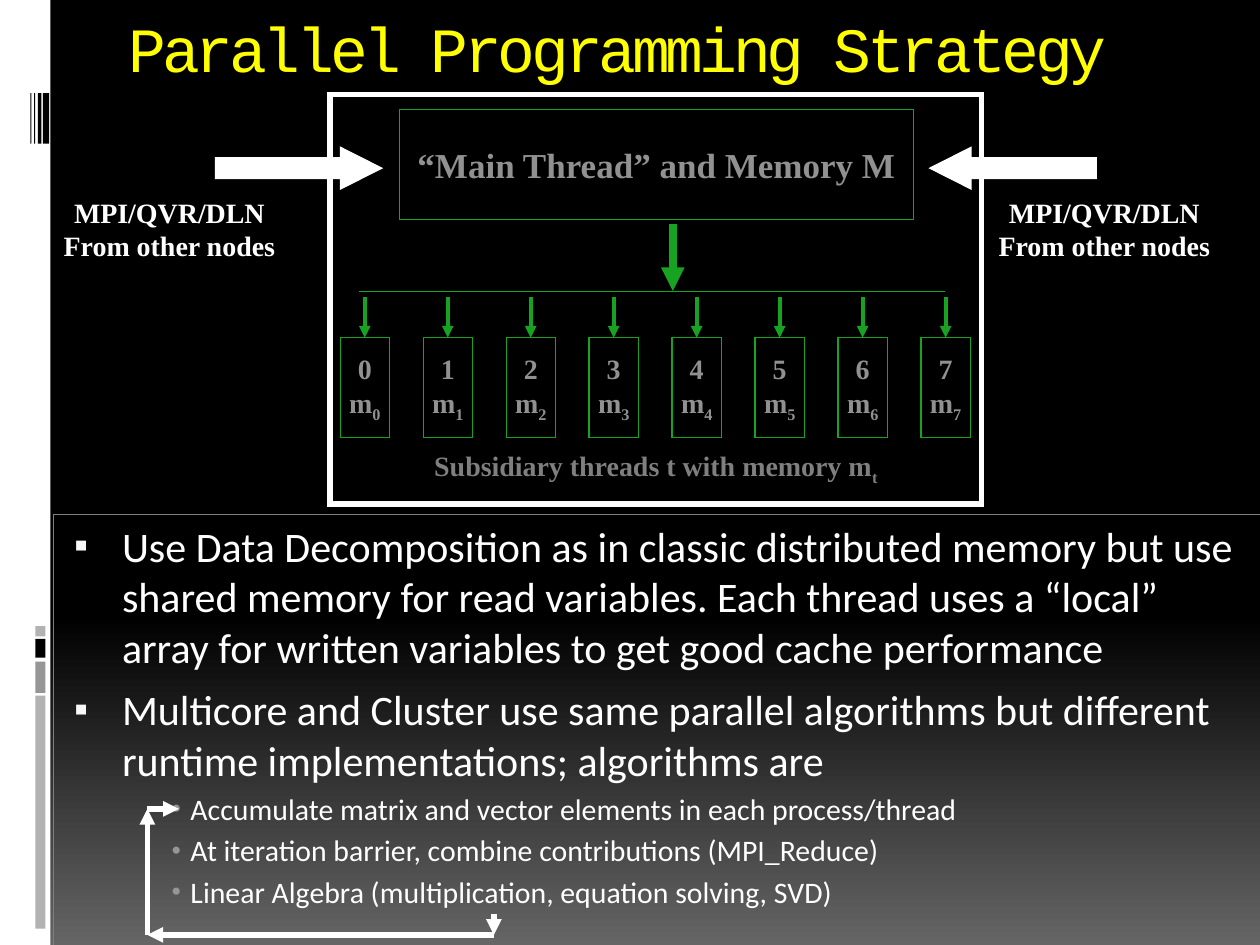
from lxml.etree import SubElement as Sub
from pptx import Presentation
from pptx.dml.color import RGBColor
from pptx.enum.shapes import MSO_CONNECTOR as Link, MSO_SHAPE as Form
from pptx.enum.text import MSO_ANCHOR as Anchor, PP_ALIGN as Align
from pptx.oxml.ns import qn
from pptx.util import Inches, Pt

BLACK = RGBColor(0x00, 0x00, 0x00)
WHITE = RGBColor(0xFF, 0xFF, 0xFF)
PALE = RGBColor(0xF8, 0xF8, 0xF8)
SILVER = RGBColor(0xB2, 0xB2, 0xB2)
GRAY = RGBColor(0x96, 0x96, 0x96)
INK = RGBColor(0x91, 0x91, 0x91)
DIM = RGBColor(0x7F, 0x7F, 0x7F)
SMOKE = RGBColor(0x65, 0x65, 0x65)
GREEN = RGBColor(0x18, 0xA2, 0x21)
YELLOW = RGBColor(0xFF, 0xFF, 0x00)
SERIF, SANS, MONO = "Times New Roman", "Calibri", "Courier New"

POINTS = [
    "Use Data Decomposition as in classic distributed memory but use shared memory for read variables. "
    "Each thread uses a “local” array for written variables to get good cache performance",
    "Multicore and Cluster use same parallel algorithms but different runtime implementations; algorithms are",
]
STEPS = [
    " Accumulate matrix and vector elements in each process/thread",
    " At iteration barrier, combine contributions (MPI_Reduce)",
    " Linear Algebra (multiplication, equation solving, SVD)",
]


class Deck:
    """Holds the style and the current slide, and draws each kind of element."""

    def __init__(self):
        self.show = Presentation()
        self.show.slide_width, self.show.slide_height = Inches(10), Inches(7.5)
        self.slide = self.show.slides.add_slide(self.show.slide_layouts[5])
        self.shapes = self.slide.shapes

    def back(self):
        fill = self.slide.background.fill
        fill.gradient()
        fill.gradient_angle = 270
        for stop, place, color in zip(fill.gradient_stops, (0.65, 1), (BLACK, SMOKE)):
            stop.position, stop.color.rgb = place, color

    def font(self, run, size, color, name, bold=False):
        run.font.size, run.font.name, run.font.bold = Pt(size), name, bold
        run.font.color.rgb = color

    def pad(self, frame, side, top):
        frame.margin_left = frame.margin_right = Inches(side)
        frame.margin_top = frame.margin_bottom = Inches(top)

    def title(self, text, *at):
        head = self.shapes.title
        head.left, head.top, head.width, head.height = map(Inches, at)
        frame = head.text_frame
        frame.text = text
        frame.vertical_anchor = Anchor.MIDDLE
        para = frame.paragraphs[0]
        para.alignment = Align.LEFT
        self.font(para.runs[0], 36, YELLOW, MONO)
        para.runs[0].font._element.set("spc", "-240")

    def shape(self, *at, form=Form.RECTANGLE, fill=None, line=None, width=0.75):
        shape = self.shapes.add_shape(form, *map(Inches, at))
        shape.shadow.inherit = False
        if fill is None:
            shape.fill.background()
        else:
            shape.fill.solid()
            shape.fill.fore_color.rgb = fill
        if line is None:
            shape.line.fill.background()
        else:
            shape.line.color.rgb, shape.line.width = line, Pt(width)
            Sub(shape.line._get_or_add_ln(), qn("a:miter"), lim="800000")
        return shape

    def label(self, frame, lines, size, color, sub=None):
        frame.text = "\n".join(lines)
        self.pad(frame, 0.04, 0.02)
        for para in frame.paragraphs:
            para.alignment = Align.CENTER
        if sub:
            run = para.add_run()
            run.text = sub
            run.font._element.set("baseline", "-25000")
        for para in frame.paragraphs:
            for run in para.runs:
                self.font(run, size, color, SERIF, True)

    def box(self, lines, *at, size=16, width=0.75, sub=None):
        box = self.shape(*at, line=GREEN, width=width)
        self.label(box.text_frame, lines, size, INK, sub)
        box.text_frame.word_wrap = False
        box.text_frame.vertical_anchor = Anchor.MIDDLE
        return box

    def text(self, lines, *at, color=WHITE, sub=None):
        frame = self.shapes.add_textbox(*map(Inches, at)).text_frame
        frame.word_wrap = True
        self.label(frame, lines, 16, color, sub)
        return frame

    def line(self, start, end, color, width, tip=True, goal=None):
        line = self.shapes.add_connector(Link.STRAIGHT, *map(Inches, start + end))
        line.line.color.rgb, line.line.width = color, Pt(width)
        if tip:
            Sub(line.line._get_or_add_ln(), qn("a:tailEnd"), type="triangle")
        if goal is not None:
            line.end_connect(goal, 0)
        Sub(line._element.spPr, qn("a:effectLst"))

    def bullet(self, para, sign, color, size):
        prop = para._p.get_or_add_pPr()
        tint = Sub(prop, qn("a:buClr"))
        Sub(tint, qn("a:srgbClr"), val=str(color))
        Sub(prop, qn("a:buSzPct"), val=str(size * 1000))
        Sub(prop, qn("a:buFont"), typeface=SERIF)
        Sub(prop, qn("a:buChar"), char=sign)

    def body(self, points, steps, *at):
        frame = self.shape(*at, line=DIM, width=0.25).text_frame
        frame.text = "\n".join(points + steps)
        frame.word_wrap = True
        frame.vertical_anchor = Anchor.TOP
        self.pad(frame, 0.1, 0.05)
        for i, para in enumerate(frame.paragraphs):
            main = i < len(points)
            left, hang, gap, size = (0.45, 0.38, 7, 24) if main else (0.94, 0.1, 3.4, 17)
            para.alignment = Align.LEFT
            para.space_before = Pt(gap)
            para.level = 0 if main else 4
            prop = para._p.get_or_add_pPr()
            prop.set("marL", str(Inches(left)))
            prop.set("indent", str(-Inches(hang)))
            self.bullet(para, *(("▪", PALE, 95) if main else ("•", GRAY, 100)))
            self.font(para.runs[0], size, WHITE, SANS)


def main():
    deck = Deck()
    deck.back()

    deck.shape(0, 0, 0.4, 7.5, fill=WHITE)
    for top, height, color in ((5.52, 1.85, SILVER), (5.25, 0.25, GRAY),
                               (5.07, 0.15, BLACK), (4.97, 0.08, SILVER)):
        deck.shape(0.28, top, 0.08, height, fill=color)
    for left, width in ((0.34, 0.05), (0.3, 0.03), (0.27, 0.01), (0.24, 0.01)):
        deck.shape(left, 0.74, width, 0.4, fill=BLACK)

    deck.body(POINTS, STEPS, 0.42, 4.08, 9.58, 3.42)
    deck.title("Parallel Programming Strategy", 0.92, 0, 8.5, 0.75)

    deck.box(["“Main Thread” and Memory M"], 3.17, 0.87, 4.08, 0.87, size=20, width=0.25)
    deck.line((5.34, 1.78), (5.34, 2.31), GREEN, 4.5)
    deck.line((2.85, 2.31), (7.5, 2.31), GREEN, 0.25, tip=False)
    wide, top = 0.39, 2.68
    for i in range(8):
        left = 2.7 + i * 4.61 / 7
        mid = left + wide / 2
        box = deck.box([str(i), "m"], left, top, wide, 0.79, sub=str(i))
        deck.line((mid, 2.36), (mid, top), GREEN, 2.25, goal=box)
    deck.text(["Subsidiary threads t with memory m"], 2.87, 3.54, 4.67, 0.34, color=DIM, sub="t")
    deck.shape(2.62, 0.75, 5.17, 3.25, line=WHITE, width=3)

    for left, form, side in ((1.71, Form.RIGHT_ARROW, 0.41), (7.38, Form.LEFT_ARROW, 7.83)):
        arrow = deck.shape(left, 1.17, 1.32, 0.33, form=form, fill=WHITE, line=WHITE)
        arrow.adjustments[1] = 0.99
        frame = deck.text(["MPI/QVR/DLN", "From other nodes"], side, 1.5, 2.17, 0.7)
        deck.pad(frame, 0, 0.05)
        frame.margin_right = Inches(0.3)

    loop = [(3.92, 7.25), (3.92, 7.42), (1.17, 7.42), (1.17, 6.42), (1.42, 6.42)]
    for start, end in zip(loop, loop[1:]):
        deck.line(start, end, WHITE, 3)

    deck.show.save("out.pptx")


if __name__ == "__main__":
    main()
